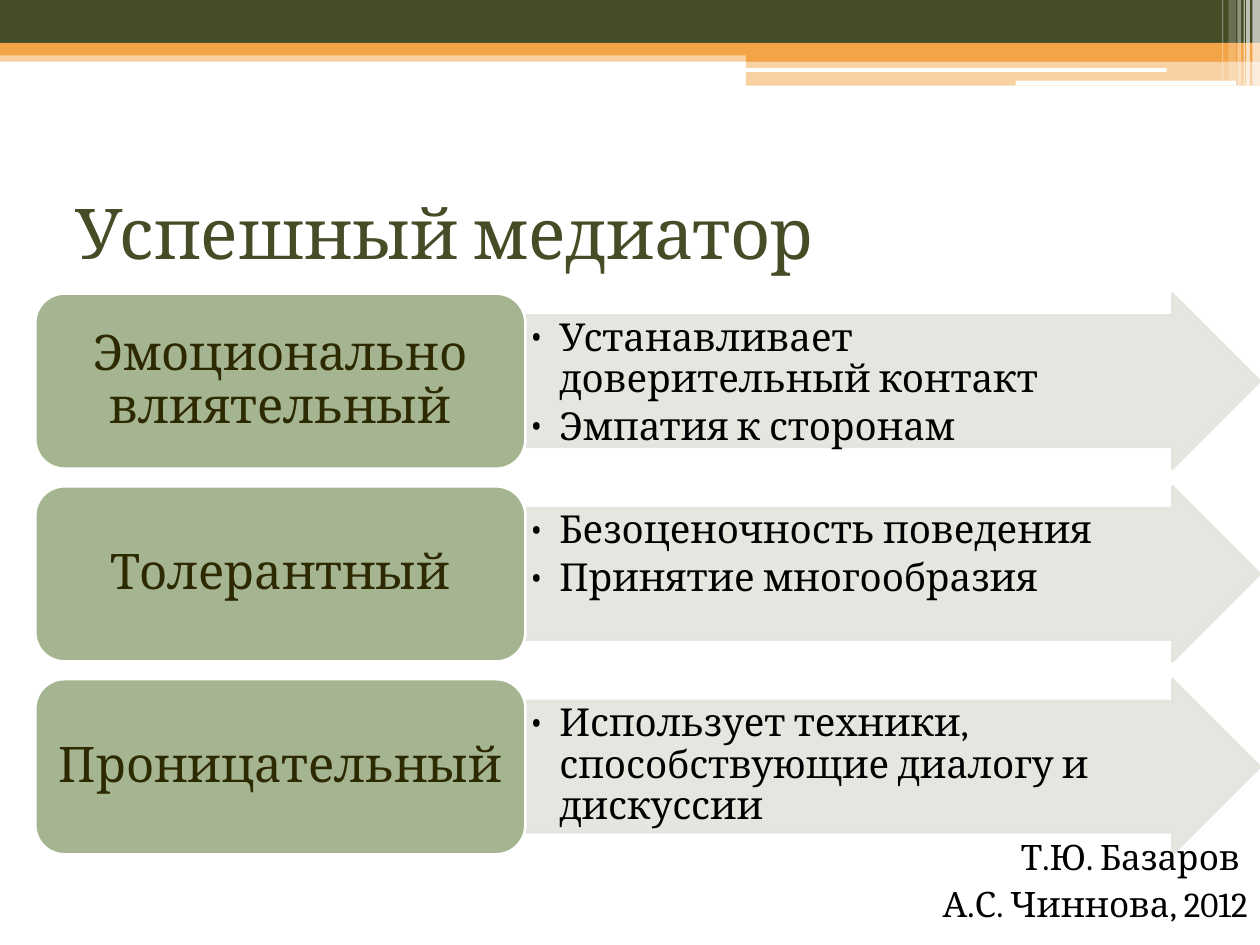
from typing import NamedTuple

from lxml import etree
from pptx import Presentation
from pptx import util as u
from pptx.dml.color import RGBColor
from pptx.enum import shapes, text
from pptx.oxml import ns

FONT = "Cambria"
COLORS = {
    "olive": "444D26",
    "orange": "F3A447",
    "white": "FFFFFF",
    "sage": "A5B592",
    "pale": "E1E5DC",
    "label": "2D2901",
    "black": "000000",
}
RECT = shapes.MSO_SHAPE.RECTANGLE
ROUNDED = shapes.MSO_SHAPE.ROUNDED_RECTANGLE
ARROW = shapes.MSO_SHAPE.RIGHT_ARROW


class Band(NamedTuple):
    left: float
    top: float
    width: float
    height: float
    color: str
    opacity: int = 100
    kind: int = RECT


class Trait(NamedTuple):
    label: str
    points: list[str]


BANDS = [
    Band(0, 0.4, 10, 0.09, "orange", 50),
    Band(0, 0, 10, 0.34, "olive"),
    Band(0, 0.34, 10, 0.1, "orange"),
    Band(5.92, 0.39, 4.08, 0.1, "orange"),
    Band(5.92, 0.48, 4.08, 0.2, "orange", 50),
    Band(5.91, 0.54, 3.35, 0.03, "white", 100, ROUNDED),
    Band(8.06, 0.64, 1.75, 0.04, "white", 100, ROUNDED),
    Band(9.94, 0, 0.06, 0.68, "white", 65),
    Band(9.89, 0, 0.03, 0.68, "white", 65),
    Band(9.87, 0, 0.01, 0.68, "white", 60),
    Band(9.82, 0, 0.03, 0.68, "white", 40),
    Band(9.75, 0, 0.06, 0.64, "white", 20),
    Band(9.7, 0, 0.01, 0.64, "white", 30),
]
TRAITS = [
    Trait("Эмоционально влиятельный",
          ["Устанавливает доверительный контакт", "Эмпатия к сторонам"]),
    Trait("Толерантный", ["Безоценочность поведения", "Принятие многообразия"]),
    Trait("Проницательный",
          ["Использует техники, способствующие диалогу и дискуссии"]),
]
AUTHORS = ["Т.Ю. Базаров ", "А.С. Чиннова, 2012"]
FIRST_ROW, ROW_STEP, ROW_HEIGHT = 2.33, 1.53, 1.39


def rgb(color: str) -> RGBColor:
    return RGBColor.from_string(COLORS[color])


def add_band(page, band: Band, line: str | None = None):
    shape = page.shapes.add_shape(
        band.kind, *map(u.Inches, (band.left, band.top, band.width, band.height)))
    shape.shadow.inherit = False
    shape.fill.solid()
    shape.fill.fore_color.rgb = rgb(band.color)
    if line:
        shape.line.color.rgb = rgb(line)
        shape.line.width = u.Pt(1.5)
    else:
        shape.line.fill.background()
    if band.opacity < 100:
        for color in shape._element.spPr.iter(ns.qn("a:srgbClr")):
            etree.SubElement(color, ns.qn("a:alpha"), val=str(band.opacity * 1000))
    return shape


def set_insets(frame, left: float, top: float, right: float, bottom: float) -> None:
    frame.margin_left, frame.margin_top = u.Inches(left), u.Inches(top)
    frame.margin_right, frame.margin_bottom = u.Inches(right), u.Inches(bottom)


def write(frame, lines: list[str], size: int, color: str, align) -> None:
    frame.word_wrap = True
    frame.text = "\n".join(lines)
    for para in frame.paragraphs:
        para.alignment = align
        para.font.size = u.Pt(size)
        para.font.name = FONT
        para.font.color.rgb = rgb(color)


def add_bullet(para) -> None:
    para.line_spacing = 0.9
    para.space_after = u.Pt(3.3)
    props = para._p.get_or_add_pPr()
    props.set("marL", str(u.Inches(0.25)))
    props.set("indent", str(u.Inches(-0.25)))
    defaults = props.find(ns.qn("a:defRPr"))
    defaults.addprevious(etree.Element(ns.qn("a:buFont"), typeface=FONT))
    defaults.addprevious(etree.Element(ns.qn("a:buChar"), char="•"))


def add_trait(page, trait: Trait, top: float) -> None:
    arrow = add_band(
        page, Band(4.17, top, 5.83, ROW_HEIGHT, "pale", 90, ARROW), "pale")
    arrow.adjustments[0] = 0.75
    arrow.adjustments[1] = 0.5
    frame = arrow.text_frame
    set_insets(frame, 0.02, 0.02, 0.2, 0.02)
    frame.vertical_anchor = text.MSO_ANCHOR.TOP
    write(frame, trait.points, 22, "black", text.PP_ALIGN.LEFT)
    for para in frame.paragraphs:
        add_bullet(para)

    box = add_band(
        page, Band(0.28, top, 3.89, ROW_HEIGHT, "sage", 100, ROUNDED), "white")
    frame = box.text_frame
    set_insets(frame, 0.02, 0.06, 0.02, 0.06)
    frame.vertical_anchor = text.MSO_ANCHOR.MIDDLE
    write(frame, [trait.label], 28, "label", text.PP_ALIGN.CENTER)
    frame.paragraphs[0].line_spacing = 0.9


def add_title(page, wording: str) -> None:
    title = page.shapes.title
    title.left, title.top = u.Inches(0.5), u.Inches(1.25)
    title.width, title.height = u.Inches(9), u.Inches(1.17)
    title.text_frame.vertical_anchor = text.MSO_ANCHOR.MIDDLE
    write(title.text_frame, [wording], 40, "olive", text.PP_ALIGN.LEFT)


def add_authors(page) -> None:
    box = page.shapes.add_textbox(*map(u.Inches, (6.92, 6.58, 3.08, 0.92)))
    write(box.text_frame, AUTHORS, 20, "black", text.PP_ALIGN.RIGHT)
    for para in box.text_frame.paragraphs:
        para.space_before = u.Pt(3)


def main() -> None:
    deck = Presentation()
    deck.slide_width, deck.slide_height = u.Inches(10), u.Inches(7.5)
    page = deck.slides.add_slide(deck.slide_layouts.get_by_name("Title Only"))
    for band in BANDS:
        add_band(page, band)
    add_title(page, "Успешный медиатор")
    for row, trait in enumerate(TRAITS):
        add_trait(page, trait, FIRST_ROW + row * ROW_STEP)
    add_authors(page)
    deck.save("out.pptx")


if __name__ == "__main__":
    main()
